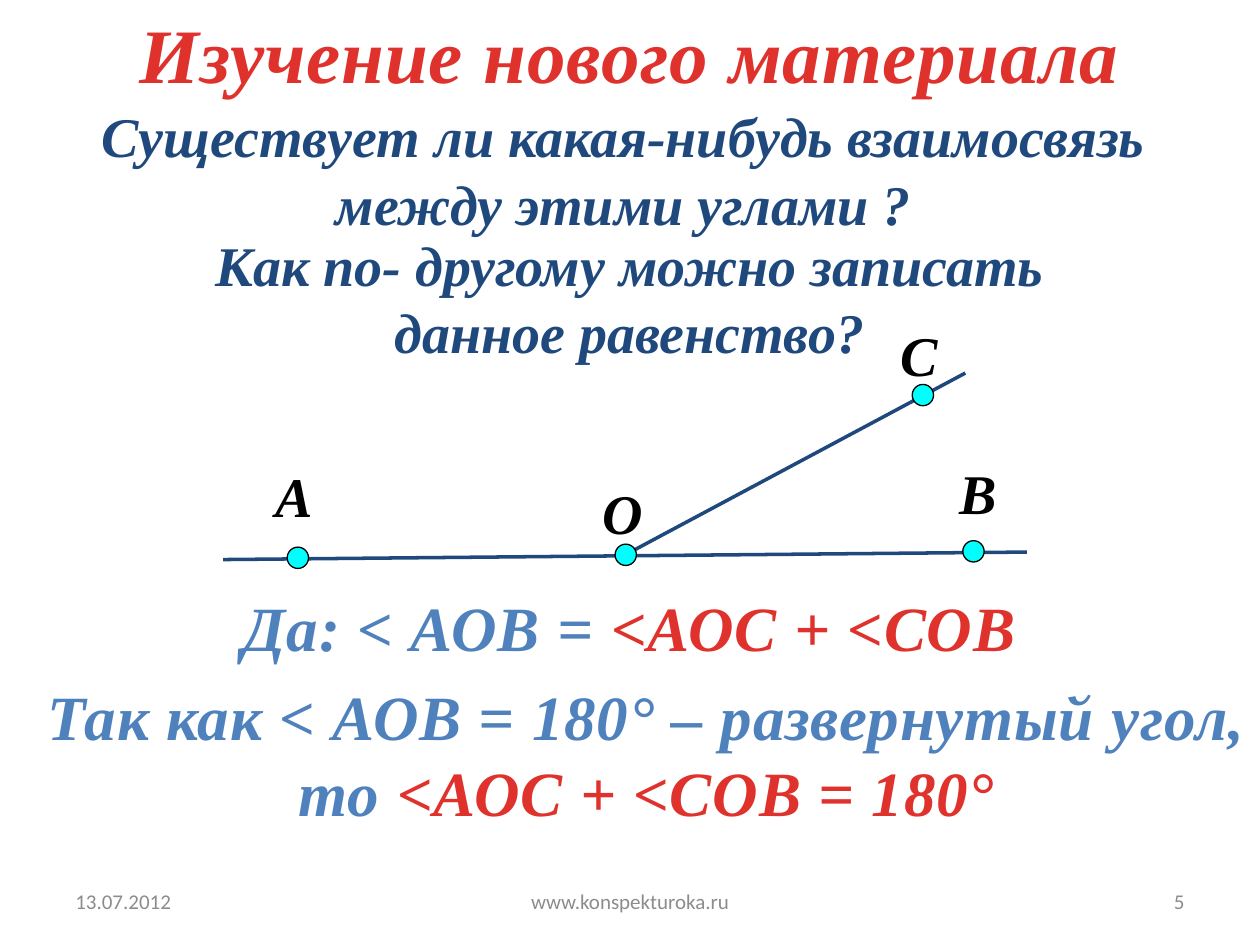
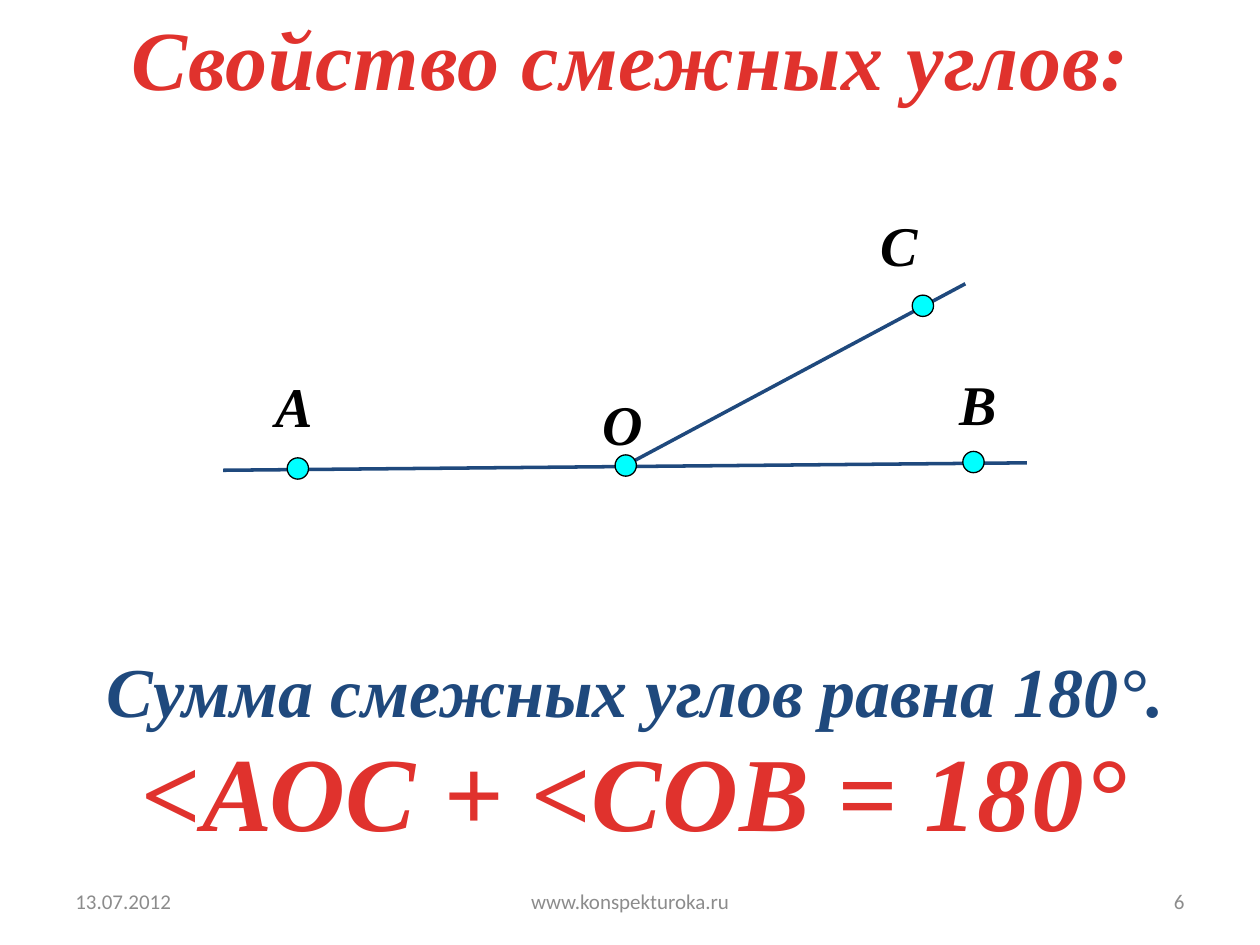
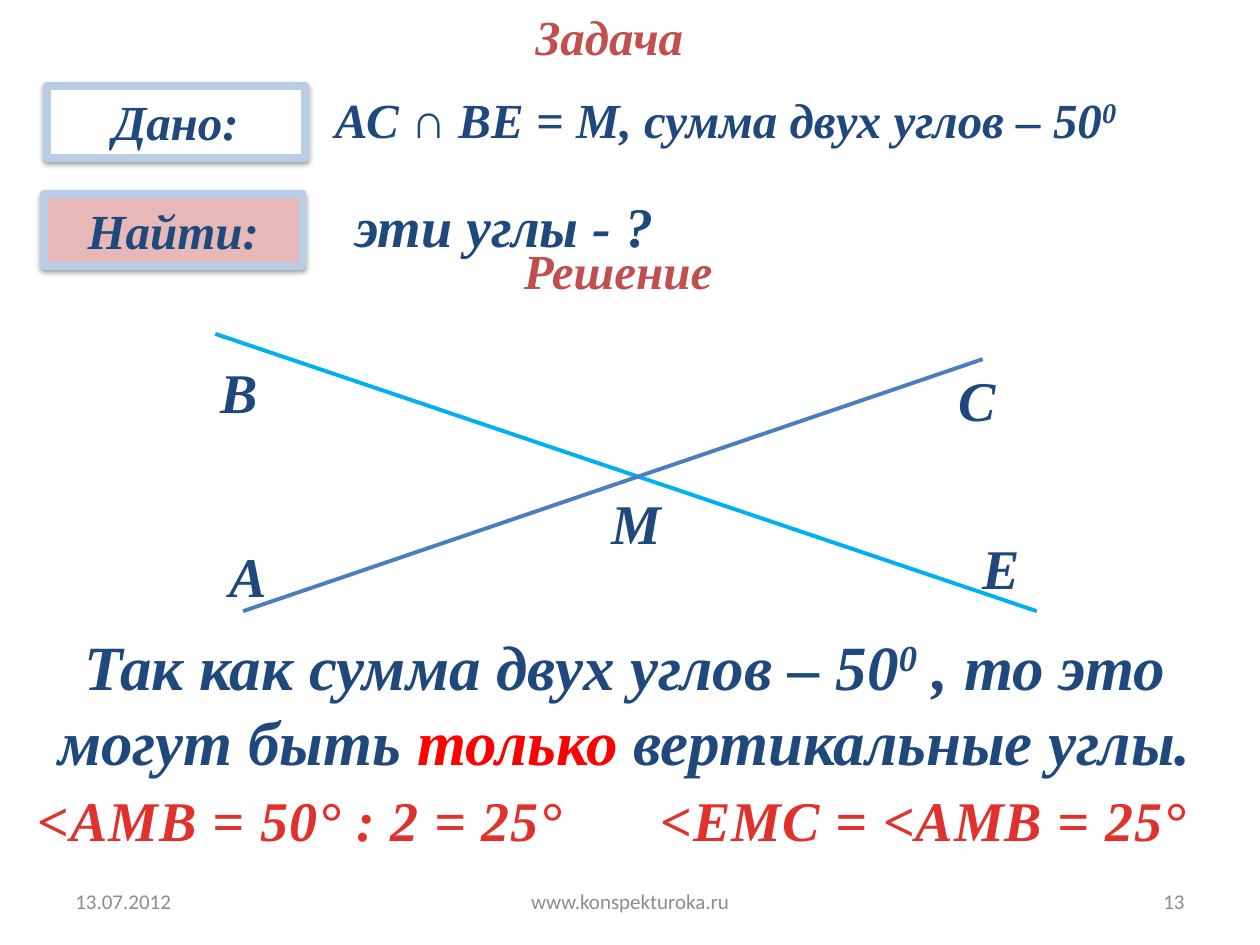
from dataclasses import dataclass

from lxml import etree
from pptx import Presentation
from pptx.dml.color import RGBColor
from pptx.enum.shapes import MSO_CONNECTOR, MSO_SHAPE
from pptx.enum.text import MSO_ANCHOR, MSO_AUTO_SIZE, PP_ALIGN
from pptx.oxml import parse_xml
from pptx.oxml.ns import nsdecls, qn
from pptx.util import Cm, Pt

NAVY = "1F497D"
BLUE = "4F81BD"
RED = "E0322D"
BRICK = "C0504D"
SKY = "00B0F0"
STEEL = "4B7EBC"
PALE_BLUE = "B9CDE5"
PINK = "E6B9B8"
PURE_RED = "FF0000"
CYAN = "00FFFF"
BLACK = "000000"
WHITE = "FFFFFF"
GREY = "8C8C8C"

SERIF = "Times New Roman"
LEFT, CENTER, RIGHT = PP_ALIGN.LEFT, PP_ALIGN.CENTER, PP_ALIGN.RIGHT
TITLE_ONLY = 5
DOT = 0.43
LABEL_HEIGHT = 1.63


@dataclass
class Span:
    text: str
    color: str = ""
    raised: bool = False


def rgb(color):
    return RGBColor.from_string(color)


def cm(*lengths):
    return [Cm(length) for length in lengths]


def write(shape, paragraphs, size, color, align=CENTER, spaced=False, wrap=False):
    """Fill a shape with bold italic paragraphs, each a string or a list of spans."""
    frame = shape.text_frame
    frame.word_wrap = wrap
    frame.auto_size = MSO_AUTO_SIZE.SHAPE_TO_FIT_TEXT
    frame.vertical_anchor = MSO_ANCHOR.TOP
    for index, spans in enumerate(paragraphs):
        para = frame.add_paragraph() if index else frame.paragraphs[0]
        para.alignment = align
        for span in [Span(spans)] if isinstance(spans, str) else spans:
            run = para.add_run()
            run.text = span.text
            font = run.font
            font.name, font.size = SERIF, Pt(size)
            font.bold = font.italic = True
            font.color.rgb = rgb(span.color or color)
            properties = run._r.get_or_add_rPr()
            if spaced:
                properties.set("spc", "50")
            if span.raised:
                properties.set("baseline", "30000")


def add_text(shapes, place, paragraphs, size, color, **options):
    write(shapes.add_textbox(*cm(*place)), paragraphs, size, color, **options)


def add_footer(page, number):
    entries = [("13.07.2012", 1.27, 5.93, LEFT),
               ("www.konspekturoka.ru", 8.68, 8.05, CENTER),
               (number, 18.2, 5.93, RIGHT)]
    for text, left, width, align in entries:
        frame = page.shapes.add_textbox(*cm(left, 17.65, width, 1.02)).text_frame
        frame.word_wrap = True
        frame.vertical_anchor = MSO_ANCHOR.MIDDLE
        frame.text = text
        para = frame.paragraphs[0]
        para.alignment = align
        para.font.name, para.font.size = "Calibri", Pt(12)
        para.font.color.rgb = rgb(GREY)


def add_page(deck, number, title, place, size, color=RED, spaced=True):
    page = deck.slides.add_slide(deck.slide_layouts[TITLE_ONLY])
    heading = page.shapes.title
    heading.left, heading.top, heading.width, heading.height = cm(*place)
    write(heading, [title], size, color, spaced=spaced)
    add_footer(page, number)
    return page


def add_line(shapes, start, end, color, width):
    line = shapes.add_connector(MSO_CONNECTOR.STRAIGHT, *cm(*start, *end))
    line.line.color.rgb = rgb(color)
    line.line.width = Pt(width)
    etree.SubElement(line._element.spPr, qn("a:effectLst"))


def add_point(page, letter, dot, label):
    """Draw a dot and its letter as one group."""
    shapes = page.shapes.add_group_shape().shapes
    circle = shapes.add_shape(MSO_SHAPE.OVAL, *cm(*dot, DOT, DOT))
    circle.shadow.inherit = False
    circle.fill.solid()
    circle.fill.fore_color.rgb = rgb(CYAN)
    circle.line.color.rgb = rgb(BLACK)
    circle.line.width = Pt(0.75)
    add_text(shapes, (*label, 1.3, LABEL_HEIGHT), [letter], 32, BLACK, align=LEFT)


def add_adjacent_angles(page, top, c_label):
    """Draw line AB with ray OC; top is the height of the ray's upper end."""
    add_line(page.shapes, (12.67, top + 3.63), (19.46, top), NAVY, 2)
    add_line(page.shapes, (4.5, top + 3.76), (20.7, top + 3.61), NAVY, 2)
    points = [("O", (12.4, 3.45), (11.89, 2.01)),
              ("С", (18.39, 0.23), c_label),
              ("А", (5.79, 3.51), (5.31, 1.65)),
              ("В", (19.41, 3.38), (19.1, 1.6))]
    for letter, (dot_x, dot_y), (label_x, label_y) in points:
        add_point(page, letter, (dot_x, top + dot_y), (label_x, top + label_y))


def add_crossing_lines(page):
    shapes = page.shapes.add_group_shape().shapes
    add_line(shapes, (4.34, 6.73), (20.9, 12.32), SKY, 2.25)
    add_line(shapes, (4.9, 12.32), (19.81, 7.24), STEEL, 2.25)
    labels = [("A", 4.37, 10.8), ("В", 4.19, 7.09), ("М", 12.07, 9.73),
              ("С", 19.08, 7.24), ("Е", 19.56, 10.64)]
    for letter, left, top in labels:
        add_text(shapes, (left, top, 1.65, 1.09), [letter], 32, NAVY, align=LEFT)


def add_card(page, left, top, text, fill):
    card = page.shapes.add_shape(MSO_SHAPE.RECTANGLE, *cm(left, top, 5.21, 1.45))
    card.fill.solid()
    card.fill.fore_color.rgb = rgb(fill)
    card.line.color.rgb = rgb(PALE_BLUE)
    card.line.width = Pt(4.5)
    card._element.spPr.append(parse_xml(
        f'<a:effectLst {nsdecls("a")}>'
        '<a:outerShdw blurRad="40000" dist="20000" dir="5400000" rotWithShape="0">'
        f'<a:srgbClr val="{BLACK}"><a:alpha val="38000"/></a:srgbClr>'
        '</a:outerShdw></a:effectLst>'))
    write(card, [text], 28, NAVY, wrap=True)


def build_question(deck):
    page = add_page(deck, "5", "Изучение нового материала", (2.46, 0, 20.47, 2.13), 44)
    shapes = page.shapes
    add_text(shapes, (1.7, 1.93, 21.74, 3),
             ["Существует ли какая-нибудь взаимосвязь", "между этими углами ?"], 32, NAVY)
    add_text(shapes, (4.01, 4.52, 17.37, 3),
             ["Как по- другому можно записать", "данное равенство?"], 32, NAVY)
    add_adjacent_angles(page, 7.52, (17.91, -1.19))
    add_text(shapes, (2.29, 11.73, 20.8, 1.8),
             [[Span("Да: < АОВ = "), Span("<АОС + <СОВ", RED)]],
             36, BLUE, spaced=True, wrap=True)
    add_text(shapes, (0.69, 13.54, 24.71, 3.33),
             ["Так как < АОВ = 180° – развернутый угол,",
              [Span("то "), Span("<АОС + <СОВ = 180°", RED)]],
             36, BLUE, spaced=True, wrap=True)


def build_property(deck):
    page = add_page(deck, "6", "Свойство смежных углов:", (2.29, 0, 20.85, 2.31), 48)
    add_adjacent_angles(page, 5.72, (17.5, -1.6))
    add_text(page.shapes, (1.9, 12.93, 22.05, 1.96),
             ["Сумма смежных углов равна 180°."], 40, NAVY, align=LEFT)
    add_text(page.shapes, (2.49, 14.53, 20.62, 2.82),
             ["<АОС + <СОВ = 180°"], 60, RED, spaced=True)


def build_problem(deck):
    page = add_page(deck, "13", "Задача", (10.52, 0, 3.53, 1.45), 28, BRICK, spaced=False)
    shapes = page.shapes
    add_crossing_lines(page)
    add_card(page, 0.94, 1.73, "Дано:", WHITE)
    add_card(page, 0.89, 3.91, "Найти:", PINK)
    add_text(shapes, (6.5, 1.68, 18.01, 1.45),
             [[Span("АС ∩ ВЕ = М, сумма двух углов – 50"), Span("0", raised=True)]],
             28, NAVY, align=LEFT, wrap=True)
    add_text(shapes, (6.91, 3.73, 6.86, 1.63), ["эти углы - ?"], 32, NAVY, align=LEFT)
    add_text(shapes, (10.29, 4.72, 4.34, 1.45), ["Решение"], 28, BRICK)
    add_text(shapes, (0.69, 12.52, 23.8, 3.33),
             [[Span("Так как сумма двух углов – 50"), Span("0", raised=True),
               Span(" , то это могут быть "), Span("только ", PURE_RED),
               Span("вертикальные углы.")]], 36, NAVY, wrap=True)
    for left, width, formula in [(0.46, 11.2, "<АМВ = 50° : 2 = 25°"),
                                 (12.7, 11.84, "<ЕМС = <АМВ = 25°")]:
        add_text(shapes, (left, 15.72, width, 1.63), [formula], 32, RED, spaced=True)


def main():
    deck = Presentation()
    deck.slide_width, deck.slide_height = cm(25.4, 19.05)
    build_question(deck)
    build_property(deck)
    build_problem(deck)
    deck.save("out.pptx")


if __name__ == "__main__":
    main()
